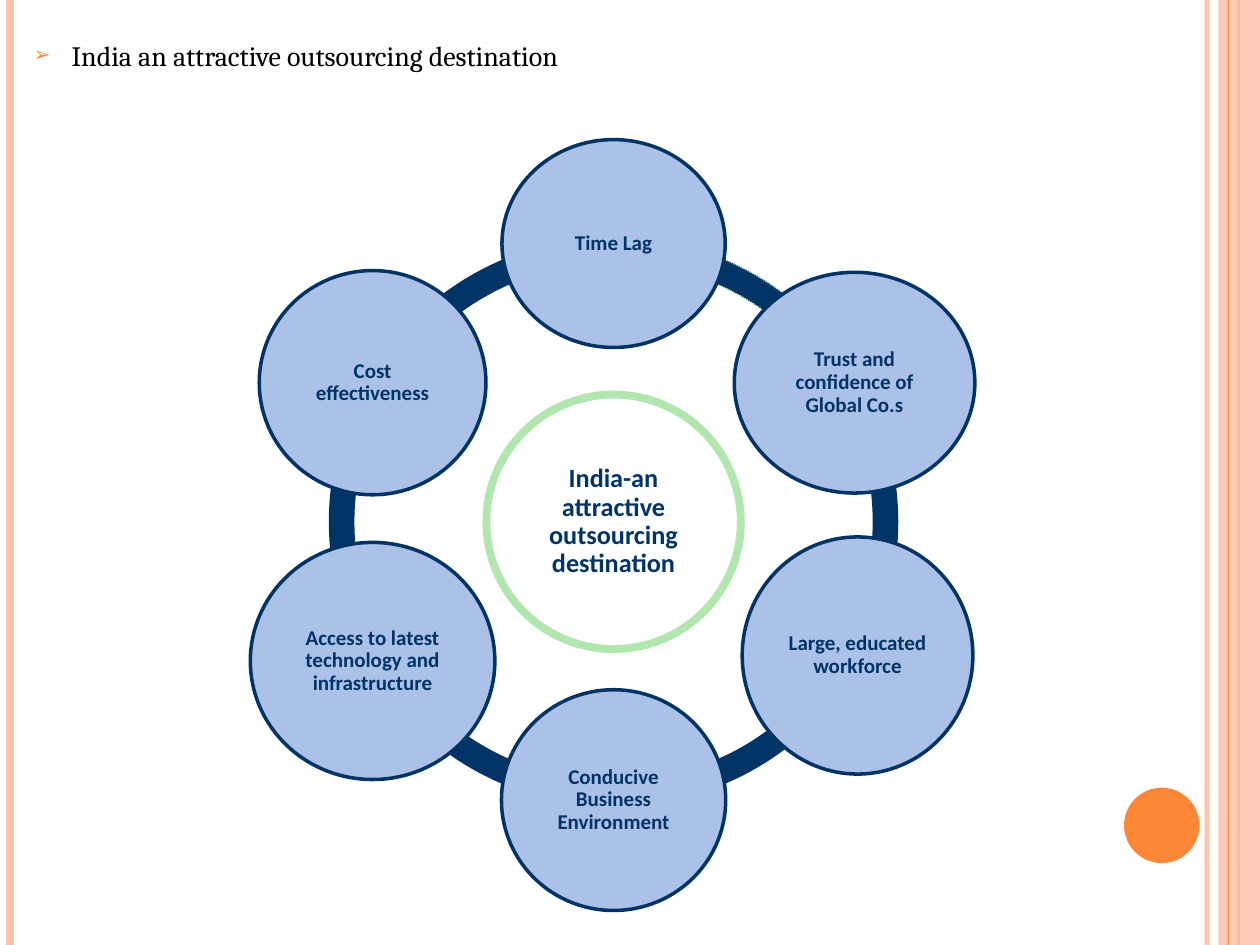
from math import cos, radians, sin

from lxml.etree import SubElement
from pptx import Presentation
from pptx.dml.color import RGBColor
from pptx.enum.dml import MSO_LINE_DASH_STYLE as DASH
from pptx.enum.shapes import MSO_CONNECTOR, MSO_SHAPE
from pptx.enum.text import MSO_ANCHOR, MSO_AUTO_SIZE, PP_ALIGN
from pptx.oxml.ns import qn
from pptx.util import Cm, Pt

BLACK = RGBColor(0x00, 0x00, 0x00)
ORANGE = RGBColor(0xFE, 0x86, 0x37)
PEACH = RGBColor(0xFE, 0xC3, 0xAE)
NAVY = RGBColor(0x00, 0x33, 0x66)
BLUE = RGBColor(0xAC, 0xC1, 0xE8)
GREEN = RGBColor(0xB1, 0xE6, 0xAE)

WIDTH, HEIGHT = 25.4, 19.05
CX, CY = 12.37, 10.52      # centre of the cycle
ORBIT = 5.61               # distance of the node centres
RING = 11.48               # outer diameter of the ring
STEP = 60                  # degrees between nodes

# x, colour, points, opacity
STRIPES = [
    (24.33, PEACH, 3, 93),
    (0.2, PEACH, 4.5, 100),
    (24.97, ORANGE, 1.5, 100),
]

# text, width, height, nudge from the orbit; clockwise from the top
NODES = [
    ("Time Lag", 4.5, 4.19, (0, 0)),
    ("Trust and confidence of Global Co.s", 4.85, 4.45, (0, 0)),
    ("Large, educated workforce", 4.65, 4.78, (0.06, -0.11)),
    ("Conducive Business Environment", 4.52, 4.45, (0, 0)),
    ("Access to latest technology and infrastructure", 4.93, 4.78, (0, 0)),
    ("Cost effectiveness", 4.57, 4.52, (0, 0)),
]


def set_opacity(element, percent):
    color = next(element.iter(qn("a:srgbClr")))
    SubElement(color, qn("a:alpha"), val=str(percent * 1000))


def add_stripe(slide, x, color, points, opacity=100):
    line = slide.shapes.add_connector(
        MSO_CONNECTOR.STRAIGHT, Cm(x), 0, Cm(x), Cm(HEIGHT))
    line.line.color.rgb = color
    line.line.width = Pt(points)
    sp_pr = line._element.spPr
    if opacity < 100:
        set_opacity(sp_pr, opacity)
    SubElement(sp_pr, qn("a:effectLst"))


def add_shape(slide, kind, x, y, w, h, fill=None, line=None, points=1):
    sp = slide.shapes.add_shape(kind, Cm(x), Cm(y), Cm(w), Cm(h))
    sp.shadow.inherit = False
    if fill is None:
        sp.fill.background()
    else:
        sp.fill.solid()
        sp.fill.fore_color.rgb = fill
    if line is None:
        sp.line.fill.background()
    else:
        sp.line.color.rgb = line
        sp.line.width = Pt(points)
    return sp


def add_arc(slide, start, line=None):
    arc = add_shape(slide, MSO_SHAPE.BLOCK_ARC, CX - RING / 2, CY - RING / 2,
                    RING, RING, NAVY, line, 0.75)
    # Angles are stored in 1/60000 degree, adjustments scaled by 1/100000
    arc.adjustments[0] = start % 360 * 0.6
    arc.adjustments[1] = (start + STEP) % 360 * 0.6
    arc.adjustments[2] = 0.045
    return arc


def add_circle(slide, text, cx, cy, w, h, size, fill, line, points):
    sp = add_shape(slide, MSO_SHAPE.OVAL, cx - w / 2, cy - h / 2, w, h,
                   fill, line, points)
    tf = sp.text_frame
    tf.text = text
    tf.word_wrap = True
    tf.vertical_anchor = MSO_ANCHOR.MIDDLE
    tf.margin_left = tf.margin_right = Cm(0.05)
    tf.margin_top = tf.margin_bottom = Cm(0.05)
    p = tf.paragraphs[0]
    p.alignment = PP_ALIGN.CENTER
    p.line_spacing = 0.9
    font = p.runs[0].font
    font.name, font.size, font.bold = "Calibri", Pt(size), True
    font.color.rgb = NAVY


def add_body(slide, text):
    body = slide.placeholders[1]
    body.left, body.top = Cm(0.43), Cm(0.64)
    body.width, body.height = Cm(24.97), Cm(18.41)
    tf = body.text_frame
    tf.text = text
    tf.auto_size = MSO_AUTO_SIZE.NONE
    p = tf.paragraphs[0]
    p.space_before = Pt(6)
    font = p.runs[0].font
    font.name, font.size = "Cambria", Pt(16)
    font.color.rgb = BLACK
    # Arrow bullet with a hanging indent
    p_pr = p._p.get_or_add_pPr()
    p_pr.set("marL", str(Cm(0.76)))
    p_pr.set("indent", str(-Cm(0.76)))
    color = SubElement(p_pr, qn("a:buClr"))
    SubElement(color, qn("a:srgbClr"), val=str(ORANGE))
    SubElement(p_pr, qn("a:buSzPct"), val="70000")
    SubElement(p_pr, qn("a:buChar"), char="➢")


def add_frame(slide):
    for stripe in STRIPES:
        add_stripe(slide, *stripe)
    band = add_shape(slide, MSO_SHAPE.RECTANGLE, 24.56, 0, 0.84, HEIGHT, PEACH)
    set_opacity(band._element.spPr, 87)
    add_stripe(slide, 24.77, ORANGE, 0.75)
    add_shape(slide, MSO_SHAPE.OVAL, 22.66, 15.88, 1.52, 1.52, ORANGE)


def add_cycle(slide):
    angles = [i * STEP - 90 for i in range(len(NODES))]
    # Ring: the arc after the top node has a dotted edge
    for angle in angles[1:]:
        add_arc(slide, angle)
    add_arc(slide, angles[0], GREEN).line.dash_style = DASH.ROUND_DOT
    # Hub and nodes
    add_circle(slide, "India-an attractive outsourcing destination",
               CX, CY, 5.13, 5.13, 15, None, GREEN, 4.5)
    for angle, (text, w, h, (dx, dy)) in zip(angles, NODES):
        x = CX + ORBIT * cos(radians(angle)) + dx
        y = CY + ORBIT * sin(radians(angle)) + dy
        add_circle(slide, text, x, y, w, h, 12, BLUE, NAVY, 2)


def main():
    prs = Presentation()
    prs.slide_width, prs.slide_height = Cm(WIDTH), Cm(HEIGHT)
    slide = prs.slides.add_slide(prs.slide_layouts[1])
    title = slide.shapes.title._element
    title.getparent().remove(title)
    add_frame(slide)
    add_body(slide, "India an attractive outsourcing destination")
    add_cycle(slide)
    prs.save("out.pptx")


if __name__ == "__main__":
    main()
